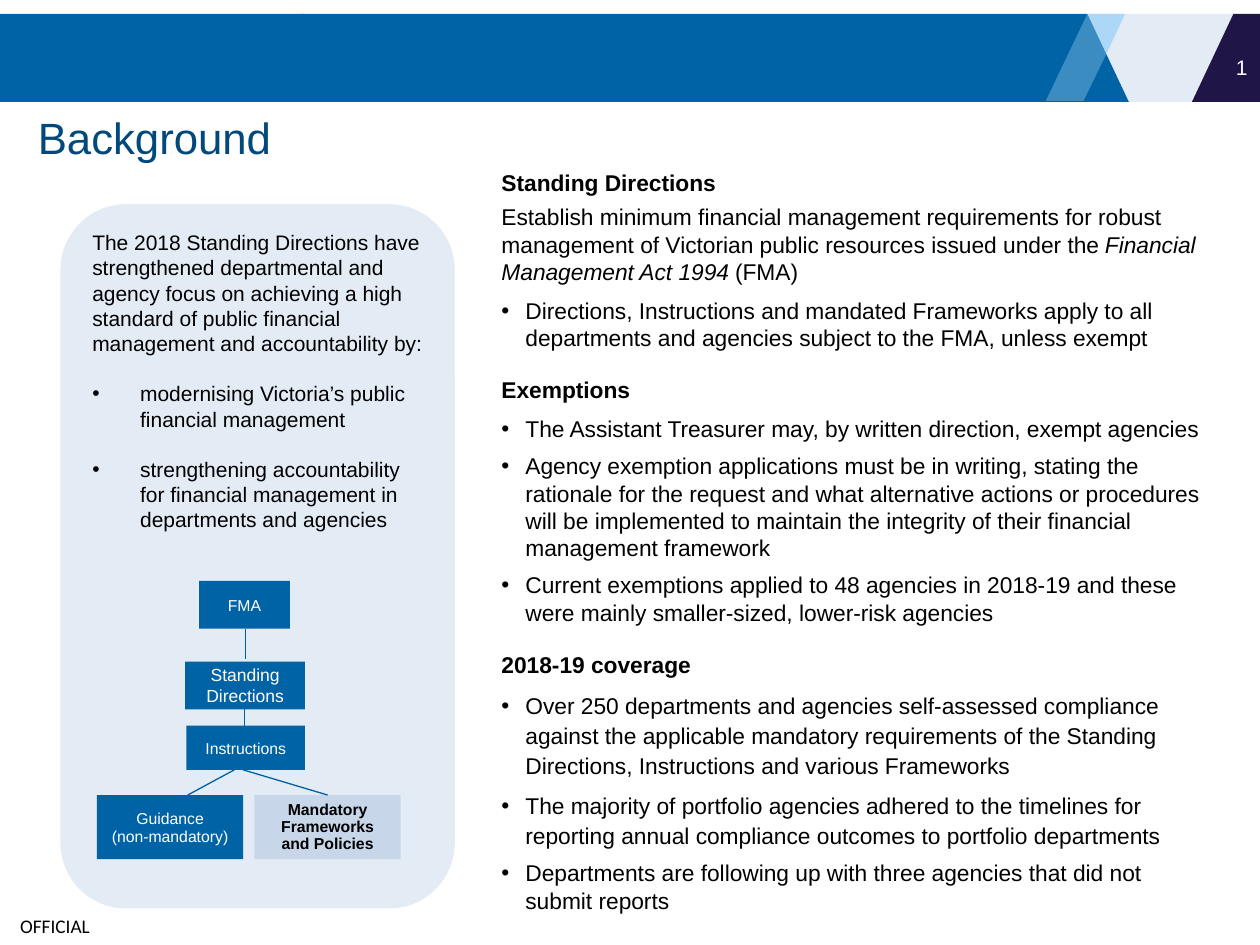
from lxml import etree
from pptx import Presentation
from pptx.dml.color import RGBColor
from pptx.enum.shapes import MSO_CONNECTOR, MSO_SHAPE
from pptx.enum.text import MSO_ANCHOR, MSO_AUTO_SIZE, PP_ALIGN
from pptx.oxml.ns import qn
from pptx.util import Inches, Pt

RECTANGLE = MSO_SHAPE.RECTANGLE
STRAIGHT = MSO_CONNECTOR.STRAIGHT
TOP, MIDDLE = MSO_ANCHOR.TOP, MSO_ANCHOR.MIDDLE
LEFT, CENTER, RIGHT = PP_ALIGN.LEFT, PP_ALIGN.CENTER, PP_ALIGN.RIGHT
NO_FIT = MSO_AUTO_SIZE.NONE
TWO_CONTENT = 3
COLORS = {
    "blue": "0063A6", "link": "0061A2", "title": "00497A", "pale": "E3EBF4",
    "soft": "C7D7E9", "navy": "201547", "sky": "31ACFF", "ice": "C5EEFF",
    "black": "000000", "white": "FFFFFF",
}
PANEL_TEXT = [
    ("The 2018 Standing Directions have strengthened departmental and agency focus on "
     "achieving a high standard of public financial management and accountability by:", False),
    ("modernising Victoria’s public financial management", True),
    ("strengthening accountability for financial management in departments and agencies", True),
]
INTRO = [
    ("Establish minimum financial management requirements for robust management of "
     "Victorian public resources issued under the ", False),
    ("Financial Management Act 1994 ", True),
    ("(FMA)", False),
]
SECTIONS = [
    ("Standing Directions", INTRO, [
        ("Directions, Instructions and mandated Frameworks apply to all departments and "
         "agencies subject to the FMA, unless exempt", 1),
    ]),
    ("Exemptions", [], [
        ("The Assistant Treasurer may, by written direction, exempt agencies", 1),
        ("Agency exemption applications must be in writing, stating the rationale for the "
         "request and what alternative actions or procedures will be implemented to maintain "
         "the integrity of their financial management framework", 1),
        ("Current exemptions applied to 48 agencies in 2018-19 and these were mainly "
         "smaller-sized, lower-risk agencies", 1),
    ]),
    ("2018-19 coverage", [], [
        ("Over 250 departments and agencies self-assessed compliance against the applicable "
         "mandatory requirements of the Standing Directions, Instructions and various "
         "Frameworks", 1.1),
        ("The majority of portfolio agencies adhered to the timelines for reporting annual "
         "compliance outcomes to portfolio departments", 1.1),
        ("Departments are following up with three agencies that did not submit reports", 1),
    ]),
]


def rgb(name):
    """Return the named colour."""
    return RGBColor.from_string(COLORS[name])


def place(shape, box):
    """Move and size a shape to a box in inches."""
    shape.left, shape.top, shape.width, shape.height = map(Inches, box)


def paint(shape, color, opacity=100):
    """Give a shape a flat fill with no line or shadow."""
    shape.shadow.inherit = False
    shape.line.fill.background()
    shape.fill.solid()
    shape.fill.fore_color.rgb = rgb(color)
    if opacity < 100:
        tint = shape.fill._xPr.find(qn("a:solidFill"))[0]
        etree.SubElement(tint, qn("a:alpha")).set("val", str(opacity * 1000))


def style(para, size, color="black", align=LEFT, bold=False, font="Arial"):
    """Set the look of a whole paragraph."""
    para.alignment = align
    para.font.name, para.font.size, para.font.bold = font, Pt(size), bold
    para.font.color.rgb = rgb(color)


def set_bullet(para, indent):
    """Hang a bullet at the indent in inches, or remove it when the indent is zero."""
    props = para._p.get_or_add_pPr()
    props.set("marL", str(Inches(indent)))
    props.set("indent", str(-Inches(indent)))
    if indent:
        etree.SubElement(props, qn("a:buFont")).set("typeface", "Arial")
        etree.SubElement(props, qn("a:buChar")).set("char", "•")
    else:
        etree.SubElement(props, qn("a:buNone"))


def next_para(frame):
    """Return the empty first paragraph, or a new one after the text so far."""
    first = frame.paragraphs[0]
    return frame.add_paragraph() if first.runs else first


def prepare_frame(shape, anchor):
    """Wrap the text of a shape without resizing and return its frame."""
    frame = shape.text_frame
    frame.word_wrap, frame.auto_size, frame.vertical_anchor = True, NO_FIT, anchor
    return frame


def add_rect(page, box, color):
    """Add a flat rectangle."""
    shape = page.shapes.add_shape(RECTANGLE, *map(Inches, box))
    paint(shape, color)
    return shape


def add_label(page, box, text, size, color, align=LEFT, font="Arial"):
    """Add a one-line text box, centred vertically."""
    label = page.shapes.add_textbox(*map(Inches, box))
    frame = prepare_frame(label, MIDDLE)
    frame.text = text
    style(frame.paragraphs[0], size, color, align, font=font)
    return frame


def add_banner(page, box):
    """Draw the header band with its slanted pieces and the slide number."""
    left, top, width, height = box
    right, bottom = left + width, top + height
    fold = (right - 1.22, top + 0.32)
    add_rect(page, (right - 1.42, top, 1.22, height), "pale")
    add_rect(page, (left, top, 2.41, height), "blue")
    pieces = [
        ([(2.4, top), (right - 1.37, top), (right - 1.04, bottom), (2.4, bottom)], "blue", 100),
        ([(right - 1.37, top), (right - 1.07, top), fold], "sky", 30),
        ([(right - 1.37, top), fold, (right - 1.4, bottom - 0.01),
          (right - 1.7, bottom - 0.01)], "ice", 30),
        ([(right - 0.21, top), (right, top), (right, bottom), (right - 0.54, bottom)],
         "navy", 100),
    ]
    for points, color, opacity in pieces:
        corners = [(Inches(x), Inches(y)) for x, y in points]
        builder = page.shapes.build_freeform(*corners[0], scale=1.0)
        builder.add_line_segments(corners[1:], close=True)
        paint(builder.convert_to_shape(), color, opacity)
    add_label(page, (right - 0.42, top + 0.22, 0.42, 0.4), "1", 12, "white", RIGHT)


def add_title(page, box):
    """Fill the title placeholder."""
    place(page.shapes.title, box)
    frame = prepare_frame(page.shapes.title, MIDDLE)
    frame.text = "Background"
    style(frame.paragraphs[0], 25, "title")


def add_panel(page, box):
    """Fill the rounded side panel."""
    panel = page.placeholders[1]
    place(panel, box)
    outline = etree.SubElement(panel._element.spPr, qn("a:prstGeom"))
    outline.set("prst", "roundRect")
    etree.SubElement(outline, qn("a:avLst"))
    panel.fill.solid()
    panel.fill.fore_color.rgb = rgb("pale")
    frame = prepare_frame(panel, TOP)
    for text, bulleted in PANEL_TEXT:
        para = next_para(frame)
        para.add_run().text = text
        style(para, 12)
        para.space_after = Pt(12)
        set_bullet(para, 0.38 if bulleted else 0)


def add_sections(page, box):
    """Fill the main text with headings, an introduction and bullets."""
    body = page.placeholders[2]
    place(body, box)
    frame = prepare_frame(body, TOP)
    for number, (heading, intro, bullets) in enumerate(SECTIONS):
        opening = [([(heading, False)], True, 11 if number else 0)]
        if intro:
            opening.append((intro, False, 0))
        for spans, bold, gap in opening:
            para = next_para(frame)
            style(para, 13, bold=bold)
            para.space_before, para.space_after = Pt(gap), Pt(4)
            set_bullet(para, 0)
            for text, italic in spans:
                span = para.add_run()
                span.text, span.font.italic = text, italic
        for text, spacing in bullets:
            para = next_para(frame)
            para.add_run().text = text
            style(para, 13)
            para.line_spacing, para.space_after = spacing, Pt(3)
            set_bullet(para, 0.19)


def add_hierarchy(page, box):
    """Draw the tree of instruments and the lines between them."""
    left, top = box[:2]
    nodes = [
        ((0.81, 0, 0.72, 0.38), ["FMA"], 9, "blue"),
        ((0.7, 0.64, 0.95, 0.38), ["Standing", "Directions"], 10, "blue"),
        ((0.71, 1.15, 0.94, 0.35), ["Instructions"], 9, "blue"),
        ((1.25, 1.7, 1.16, 0.51), ["Mandatory Frameworks and Policies"], 9, "soft"),
        ((0, 1.7, 1.16, 0.51), ["Guidance", "(non-mandatory)"], 9, "blue"),
    ]
    for (x, y, width, height), lines, size, color in nodes:
        node = add_rect(page, (left + x, top + y, width, height), color)
        frame = prepare_frame(node, MIDDLE)
        soft = color == "soft"
        for line in lines:
            para = next_para(frame)
            para.add_run().text = line
            style(para, size, "black" if soft else "white", CENTER, soft)
            para.line_spacing = 0.9 if soft else 1
    links = [(1.17, 1.02, 1.17, 1.15), (1.09, 1.5, 0.72, 1.7),
             (1.16, 1.5, 1.83, 1.7), (1.18, 0.38, 1.18, 0.62)]
    for x1, y1, x2, y2 in links:
        ends = map(Inches, (left + x1, top + y1, left + x2, top + y2))
        link = page.shapes.add_connector(STRAIGHT, *ends)
        link.line.color.rgb, link.line.width = rgb("link"), Pt(0.75)
        etree.SubElement(link._element.spPr, qn("a:effectLst"))


def main():
    """Build and save the slide."""
    deck = Presentation()
    deck.slide_width, deck.slide_height = Inches(10), Inches(7.5)
    page = deck.slides.add_slide(deck.slide_layouts[TWO_CONTENT])
    add_banner(page, (0, 0.11, 10, 0.7))
    add_title(page, (0.2, 0.75, 9, 0.68))
    add_panel(page, (0.48, 1.62, 3.13, 5.59))
    add_sections(page, (3.88, 1.29, 5.78, 6.08))
    add_hierarchy(page, (0.77, 4.61, 2.41, 2.21))
    marking = add_label(page, (0, 7.19, 0.87, 0.31), "OFFICIAL", 11, "black", font="Calibri")
    marking.margin_left, marking.margin_right = Inches(0.16), 0
    marking.margin_top = marking.margin_bottom = 0
    deck.save("out.pptx")


if __name__ == "__main__":
    main()
